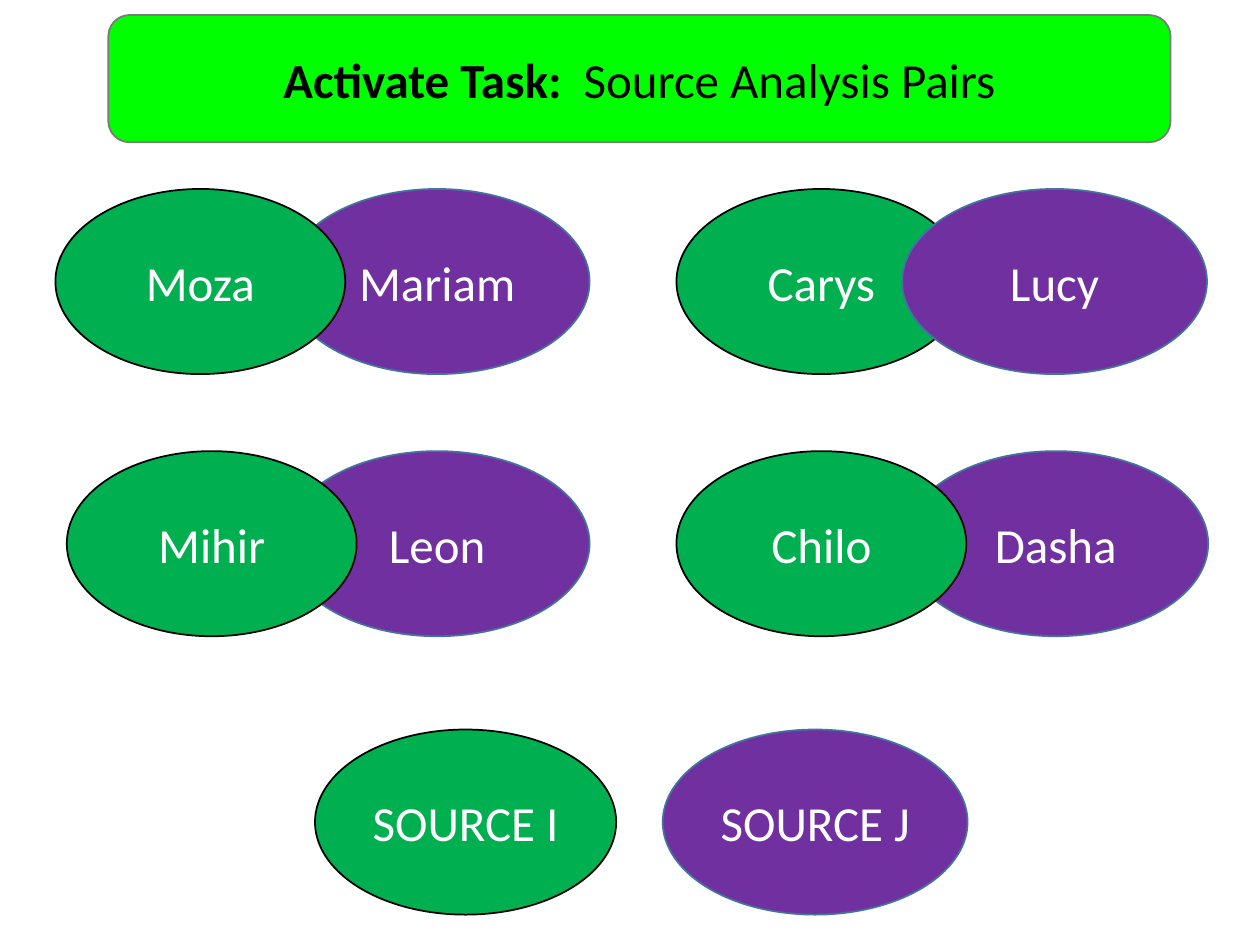
from pptx import Presentation
from pptx.dml.color import RGBColor
from pptx.enum.shapes import MSO_SHAPE as Shape
from pptx.enum.text import MSO_ANCHOR as Anchor, PP_ALIGN as Align
from pptx.util import Pt

COLOURS = {
    "green": "00B050", "purple": "7030A0", "lime": "00FF00",
    "black": "000000", "white": "FFFFFF", "blue": "43739E", "grey": "7A7A7A",
}
OUTLINES = {"green": "black", "purple": "blue", "lime": "grey"}
OVAL_HEIGHT = 105.8
GREEN_WIDTH, PURPLE_WIDTH, SOURCE_I_WIDTH = 165.6, 174.2, 172.1
ROW_1, ROW_2, SOURCE_ROW = 108, 257.8, 416.9

# Each oval: name, fill, left, top, width; later ovals lie in front.
OVALS = [
    ("Mariam", "purple", 162.7, ROW_1, PURPLE_WIDTH),
    ("Moza", "green", 31.7, ROW_1, GREEN_WIDTH),
    ("Leon", "purple", 162.7, ROW_2, PURPLE_WIDTH),
    ("Mihir", "green", 38.2, ROW_2, GREEN_WIDTH),
    ("Carys", "green", 386.6, ROW_1, GREEN_WIDTH),
    ("Lucy", "purple", 515.5, ROW_1, PURPLE_WIDTH),
    ("Dasha", "purple", 516.2, ROW_2, PURPLE_WIDTH),
    ("Chilo", "green", 386.6, ROW_2, GREEN_WIDTH),
    ("SOURCE J", "purple", 378.7, SOURCE_ROW, PURPLE_WIDTH),
    ("SOURCE I", "green", 180, SOURCE_ROW, SOURCE_I_WIDTH),
]


def colour(name):
    return RGBColor.from_string(COLOURS[name])


class PairsSlide:
    text_format = {"name": "Calibri", "size": Pt(28)}
    frame_format = {"word_wrap": True, "vertical_anchor": Anchor.MIDDLE}

    def __init__(self, slide):
        self.slide = slide

    def add_label(self, kind, box, fill, runs, text_colour):
        """Add a filled shape with centred text; runs are (text, bold) pairs."""
        shape = self.slide.shapes.add_shape(kind, *map(Pt, box))
        shape.shadow.inherit = False
        shape.fill.solid()
        shape.fill.fore_color.rgb = colour(fill)
        shape.line.color.rgb = colour(OUTLINES[fill])
        shape.line.width = Pt(1)
        for key, value in self.frame_format.items():
            setattr(shape.text_frame, key, value)
        paragraph = shape.text_frame.paragraphs[0]
        paragraph.alignment = Align.CENTER
        for text, bold in runs:
            run = paragraph.add_run()
            run.text = text
            for key, value in {**self.text_format, "bold": bold}.items():
                setattr(run.font, key, value)
            run.font.color.rgb = colour(text_colour)

    def add_banner(self, box, runs):
        self.add_label(Shape.ROUNDED_RECTANGLE, box, "lime", runs, "black")

    def add_oval(self, name, fill, left, top, width):
        box = (left, top, width, OVAL_HEIGHT)
        self.add_label(Shape.OVAL, box, fill, [(name, False)], "white")


def main():
    presentation = Presentation()
    presentation.slide_width, presentation.slide_height = Pt(720), Pt(540)
    pairs = PairsSlide(presentation.slides.add_slide(presentation.slide_layouts[6]))
    pairs.add_banner(
        (61.9, 8.6, 607, 72.7),
        [("Activate Task:", True), ("  Source Analysis Pairs", False)],
    )
    for oval in OVALS:
        pairs.add_oval(*oval)
    presentation.save("out.pptx")


if __name__ == "__main__":
    main()
